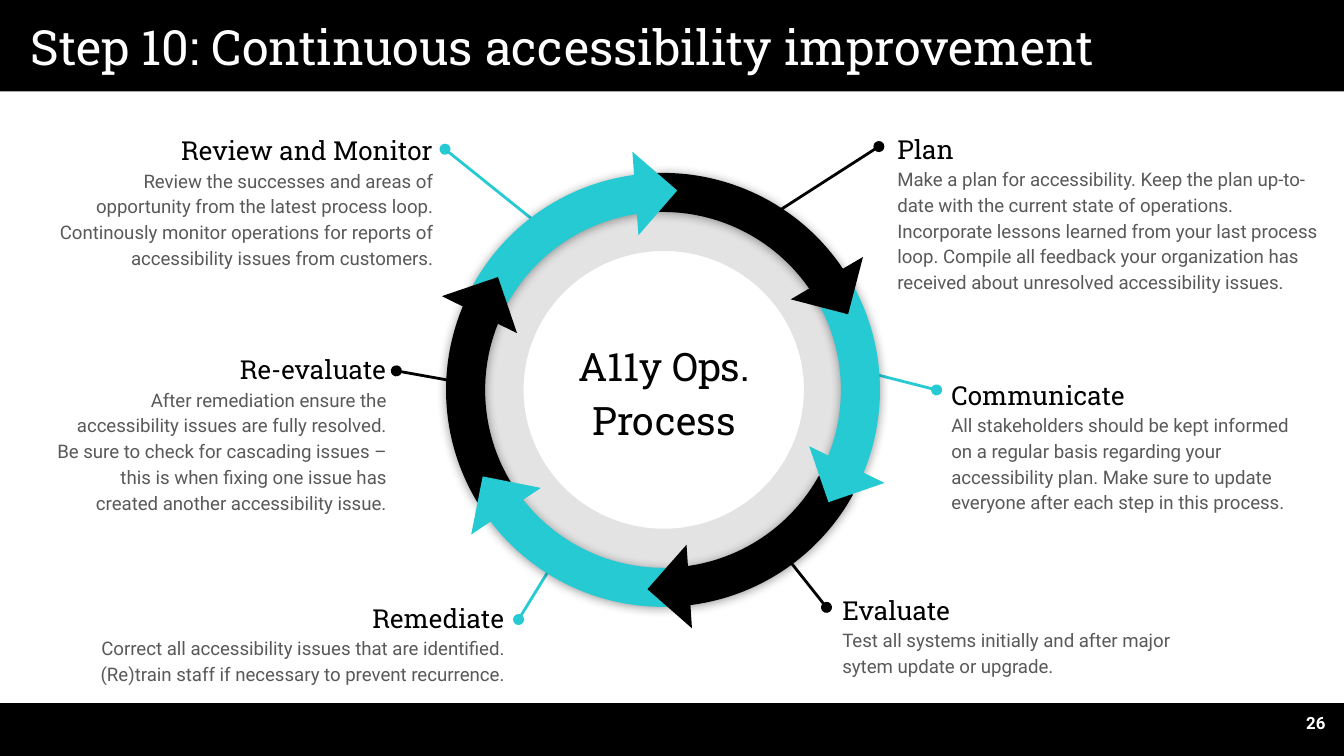
from dataclasses import dataclass
from math import cos, radians, sin

from lxml.etree import SubElement
from pptx import Presentation
from pptx.dml.color import RGBColor
from pptx.enum.shapes import MSO_CONNECTOR, MSO_SHAPE as Shape
from pptx.enum.text import MSO_ANCHOR as Anchor, PP_ALIGN as Align
from pptx.oxml.ns import qn
from pptx.util import Cm, Pt

BLACK = RGBColor(0x00, 0x00, 0x00)
TEAL = RGBColor(0x25, 0xCA, 0xD3)
WHITE = RGBColor(0xFF, 0xFF, 0xFF)
GREY = RGBColor(0x59, 0x59, 0x59)
HUB_COLOR = RGBColor(0x02, 0x02, 0x02)
SERIF, SANS = "Roboto Slab", "Roboto"

# Ring geometry in centimetres and degrees
CENTER_X, CENTER_Y = 12.53, 7.37
RING_SIZE = 8.2
HEAD_RADIUS, HEAD_SIZE = 3.75, 1.12
HEAD_ANGLE = 311.1
ARC_START, ARC_END, ARC_THICKNESS = 154.56, 189.99, 0.09


@dataclass
class Step:
    heading: str
    description: str
    color: RGBColor
    rotation: float
    box: tuple
    leader: tuple
    align: Align
    arc_start: float = ARC_START


STEPS = [
    Step("Plan",
         "Make a plan for accessibility. Keep the plan up-to-date with the current state of "
         "operations. Incorporate lessons learned from your last process loop. Compile all "
         "feedback your organization has received about unresolved accessibility issues.",
         BLACK, 14.6, (16.71, 2.18, 8.46, 3.91), (16.61, 2.77, 14.4, 4.19), Align.LEFT, 152.29),
    Step("Review and Monitor",
         "Review the successes and areas of opportunity from the latest process loop. "
         "Continously monitor operations for reports of accessibility issues from customers.",
         TEAL, 310.9, (0.81, 2.21, 7.62, 2.03), (8.41, 2.82, 10.34, 4.37), Align.RIGHT),
    Step("Re-evaluate",
         "After remediation ensure the accessibility issues are fully resolved. Be sure to "
         "check for cascading issues – this is when fixing one issue has created another "
         "accessibility issue.",
         BLACK, 251.2, (0.79, 6.35, 6.76, 3.25), (7.49, 7.01, 8.89, 7.26), Align.RIGHT),
    Step("Remediate",
         "Correct all accessibility issues that are identified. (Re)train staff if necessary "
         "to prevent recurrence.",
         TEAL, 191.2, (0.99, 11.05, 8.79, 2.06), (9.8, 11.71, 10.44, 10.67), Align.RIGHT),
    Step("Evaluate",
         "Test all systems initially and after major sytem update or upgrade.",
         BLACK, 131.3, (15.67, 10.9, 7.14, 2.03), (15.62, 11.48, 14.81, 10.46), Align.LEFT),
    Step("Communicate",
         "All stakeholders should be kept informed on a regular basis regarding your "
         "accessibility plan. Make sure to update everyone after each step in this process.",
         TEAL, 71, (17.73, 6.83, 7.14, 3.12), (17.7, 7.37, 16.48, 7.06), Align.LEFT),
]


def add_filled(slide, preset, box, color):
    shape = slide.shapes.add_shape(preset, *map(Cm, box))
    shape.shadow.inherit = False
    shape.fill.solid()
    shape.fill.fore_color.rgb = color
    shape.line.fill.background()
    return shape


def set_alpha(color_parent, percent):
    color = color_parent.find(qn("a:srgbClr"))
    SubElement(color, qn("a:alpha"), val=str(percent * 1000))


def add_soft_shadow(shape):
    effects = shape._element.spPr.find(qn("a:effectLst"))
    shadow = SubElement(effects, qn("a:outerShdw"), blurRad=str(Pt(5.6)), dist=str(Pt(0.8)),
                        dir="5400000", algn="bl", rotWithShape="0")
    SubElement(shadow, qn("a:srgbClr"), val=str(BLACK))
    set_alpha(shadow, 40)


def square_around(x, y, size):
    return x - size / 2, y - size / 2, size, size


def add_track(slide):
    track = add_filled(slide, Shape.DONUT, (8.66, 3.51, 7.77, 7.72), BLACK)
    track.adjustments[0] = 0.16
    set_alpha(track._element.spPr.find(qn("a:solidFill")), 11)


def add_arc(slide, step):
    arc = add_filled(slide, Shape.BLOCK_ARC, square_around(CENTER_X, CENTER_Y, RING_SIZE),
                     step.color)
    for index, value in enumerate((step.arc_start, ARC_END, ARC_THICKNESS)):
        arc.adjustments[index] = value
    arc.rotation = step.rotation
    add_soft_shadow(arc)


def add_arrowhead(slide, step):
    """Place a corner-first triangle at the clockwise end of the step's arc."""
    angle = radians(step.rotation + HEAD_ANGLE)
    x = CENTER_X + HEAD_RADIUS * cos(angle)
    y = CENTER_Y + HEAD_RADIUS * sin(angle)
    head = add_filled(slide, Shape.RIGHT_TRIANGLE, square_around(x, y, HEAD_SIZE), step.color)
    head.rotation = (step.rotation - 90) % 360


def add_leader(slide, step):
    leader = slide.shapes.add_connector(MSO_CONNECTOR.STRAIGHT, *map(Cm, step.leader))
    leader.line.color.rgb = step.color
    leader.line.width = Pt(1.5)
    SubElement(leader.line._ln, qn("a:headEnd"), type="oval")
    SubElement(leader._element.spPr, qn("a:effectLst"))


def format_frame(frame, anchor):
    frame.word_wrap = True
    frame.vertical_anchor = anchor
    frame.margin_left = frame.margin_right = Cm(0.25)
    frame.margin_top = frame.margin_bottom = Cm(0.25)


def format_paragraph(paragraph, font_name, size, color, align, spacing=1.15, bold=False):
    paragraph.alignment = align
    paragraph.line_spacing = spacing
    for run in paragraph.runs:
        run.font.name = font_name
        run.font.size = Pt(size)
        run.font.color.rgb = color
        run.font.bold = bold


def add_text(slide, box, text, anchor=Anchor.TOP):
    frame = slide.shapes.add_textbox(*map(Cm, box)).text_frame
    format_frame(frame, anchor)
    frame.text = text
    return frame.paragraphs


def add_step_text(slide, step):
    heading, description = add_text(slide, step.box, f"{step.heading}\n{step.description}")
    format_paragraph(heading, SERIF, 14, BLACK, step.align)
    format_paragraph(description, SANS, 10, GREY, step.align)


def set_title(slide, text):
    title = slide.shapes.title
    title.left, title.top, title.width, title.height = map(Cm, (0.33, 0.13, 22, 1.47))
    title.text_frame.text = text
    format_frame(title.text_frame, Anchor.MIDDLE)
    format_paragraph(title.text_frame.paragraphs[0], SERIF, 26, WHITE, Align.LEFT, 1.0)


def main():
    deck = Presentation()
    deck.slide_width, deck.slide_height = Cm(25.4), Cm(14.29)
    slide = deck.slides.add_slide(deck.slide_layouts[5])
    slide.background.fill.solid()
    slide.background.fill.fore_color.rgb = BLACK
    add_filled(slide, Shape.RECTANGLE, (0, 1.73, 25.4, 11.56), WHITE)
    set_title(slide, "Step 10: Continuous accessibility improvement")

    add_track(slide)
    for step in STEPS:
        add_leader(slide, step)

    # The first arc lies under the last one, but its head lies on top
    first, *others = STEPS
    add_arc(slide, first)
    for step in others:
        add_arc(slide, step)
        add_arrowhead(slide, step)
    add_arrowhead(slide, first)

    for step in STEPS:
        add_step_text(slide, step)
    hub, = add_text(slide, (10.34, 5.87, 4.42, 2.97), "A11y Ops. Process", Anchor.MIDDLE)
    format_paragraph(hub, SERIF, 21, HUB_COLOR, Align.CENTER)
    page, = add_text(slide, (24.36, 13.39, 0.94, 0.76), "26")
    format_paragraph(page, SANS, 9, WHITE, Align.RIGHT, 0.8, bold=True)
    deck.save("out.pptx")


if __name__ == "__main__":
    main()
